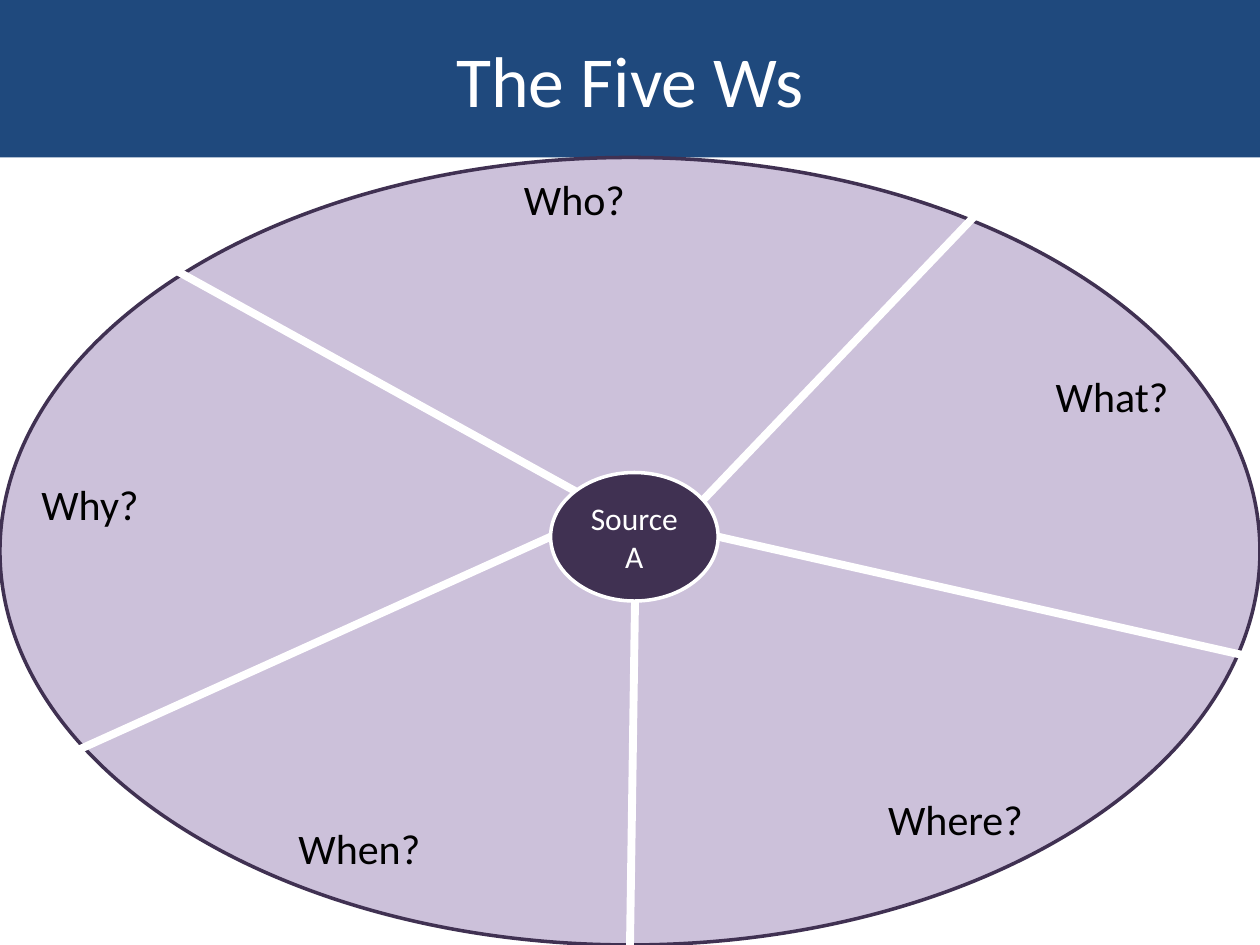
from dataclasses import dataclass

from lxml import etree
from pptx import Presentation
from pptx.dml.color import RGBColor
from pptx.enum.shapes import MSO_CONNECTOR, MSO_SHAPE
from pptx.enum.text import MSO_ANCHOR, MSO_AUTO_SIZE, PP_ALIGN
from pptx.oxml.ns import qn
from pptx.util import Inches, Pt

RECT, OVAL = MSO_SHAPE.RECTANGLE, MSO_SHAPE.OVAL
STRAIGHT = MSO_CONNECTOR.STRAIGHT
MIDDLE, CENTER = MSO_ANCHOR.MIDDLE, PP_ALIGN.CENTER
FIT_SHAPE = MSO_AUTO_SIZE.SHAPE_TO_FIT_TEXT


@dataclass(frozen=True)
class Theme:
    font: str = "Calibri"
    white: RGBColor = RGBColor(0xFF, 0xFF, 0xFF)
    black: RGBColor = RGBColor(0x00, 0x00, 0x00)
    navy: RGBColor = RGBColor(0x1F, 0x49, 0x7D)
    lilac: RGBColor = RGBColor(0xCC, 0xC1, 0xDA)
    plum: RGBColor = RGBColor(0x40, 0x31, 0x52)
    title: Pt = Pt(41)
    question: Pt = Pt(24)
    source: Pt = Pt(18)
    outline: Pt = Pt(2)
    spoke: Pt = Pt(4.5)


THEME = Theme()

prs = Presentation()
prs.slide_width, prs.slide_height = Inches(10), Inches(7.5)
s = prs.slides.add_slide(prs.slide_layouts[6])


def add_block(kind, box, fill, outline=None):
    sp = s.shapes.add_shape(kind, *map(Inches, box))
    sp.shadow.inherit = False
    sp.fill.solid()
    sp.fill.fore_color.rgb = fill
    if outline is None:
        sp.line.fill.background()
    else:
        sp.line.color.rgb = outline
        sp.line.width = THEME.outline
    return sp


def write(sp, text, size, color):
    p = sp.text_frame.paragraphs[0]
    p.text = text
    p.font.name, p.font.size, p.font.color.rgb = THEME.font, size, color
    return p


# Title band and wheel
band = add_block(RECT, (0, 0, 10, 1.25), THEME.navy)
band.text_frame.vertical_anchor = MIDDLE
write(band, "The Five Ws", THEME.title, THEME.white).alignment = CENTER
add_block(OVAL, (0, 1.25, 10, 6.25), THEME.lilac, THEME.plum)

# One question per sector: left, top, width
questions = {
    "Who?": (4.06, 1.33, 1.01),
    "What?": (8.28, 2.89, 1.11),
    "Where?": (6.95, 6.25, 1.28),
    "When?": (2.27, 6.48, 1.18),
    "Why?": (0.23, 3.75, 0.98),
}
for question, place in questions.items():
    sp = s.shapes.add_textbox(*map(Inches, place), Inches(0.5))
    tf = sp.text_frame
    tf.word_wrap = False
    tf.auto_size = FIT_SHAPE
    write(sp, question, THEME.question, THEME.black)

# Spokes from the hub to the rim
spokes = [
    (4.57, 3.9, 1.33, 2.11),
    (5.56, 3.99, 7.73, 1.72),
    (5.7, 4.26, 10, 5.23),
    (5.04, 4.77, 5, 7.5),
    (4.37, 4.26, 0.47, 6.02),
]
for ends in spokes:
    spoke = s.shapes.add_connector(STRAIGHT, *map(Inches, ends))
    spoke.line.color.rgb = THEME.white
    spoke.line.width = THEME.spoke
    etree.SubElement(spoke._element.spPr, qn("a:effectLst"))

# Hub
hub = add_block(OVAL, (4.37, 3.75, 1.33, 1.02), THEME.plum, THEME.white)
hub.text_frame.word_wrap = True
hub.text_frame.vertical_anchor = MIDDLE
write(hub, "Source A", THEME.source, THEME.white).alignment = CENTER

prs.save("out.pptx")
